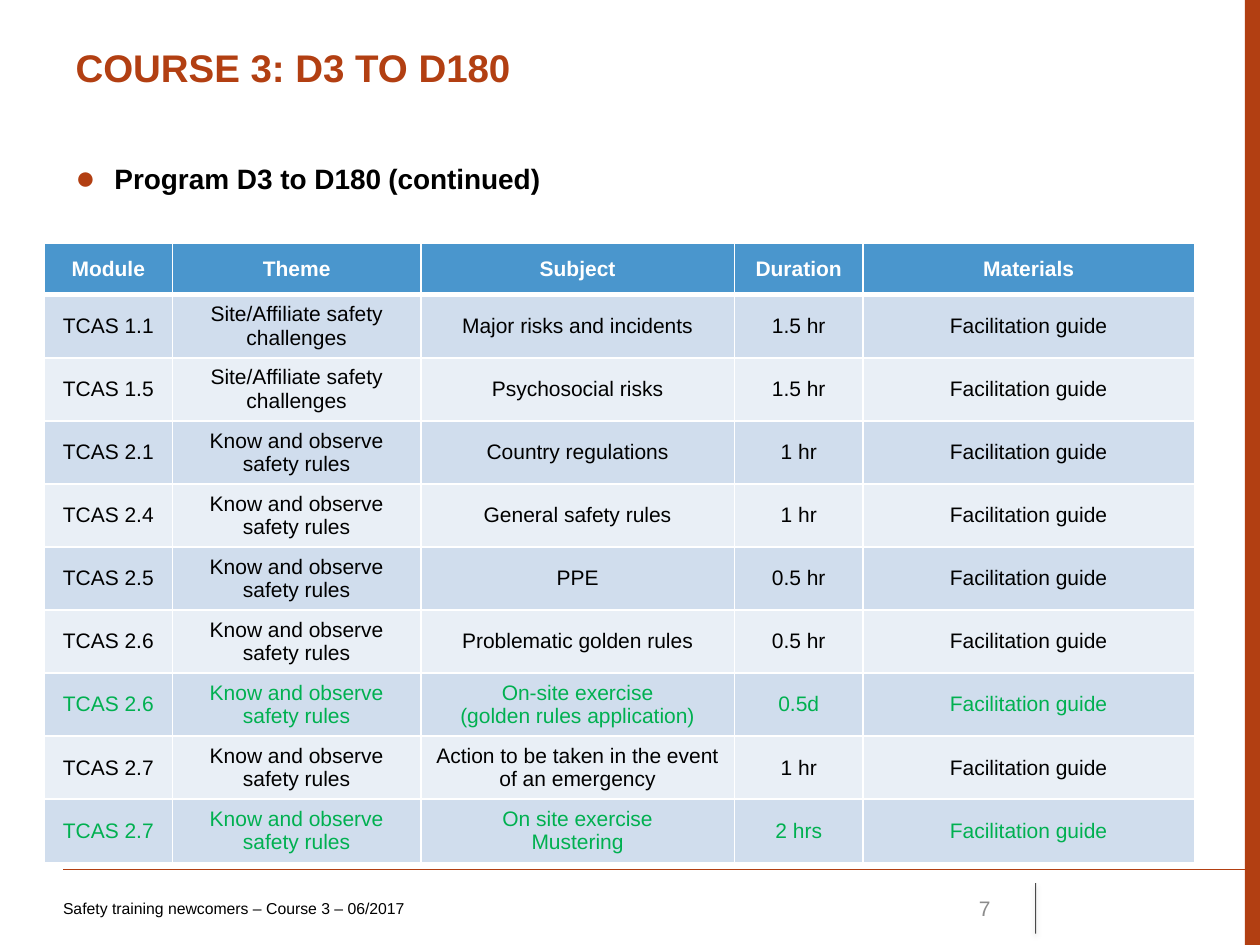
"""Build the Course 3 programme slide."""
from dataclasses import dataclass

from lxml import etree
from pptx import Presentation
from pptx import util as u
from pptx.dml.color import RGBColor
from pptx.enum import shapes, text
from pptx.oxml import parse_xml
from pptx.oxml.ns import nsdecls, qn


@dataclass(frozen=True)
class Theme:
    """Colours, font and type sizes of the slide."""
    font: str = "Arial"
    accent: str = "B23F12"
    ink: str = "000000"
    white: str = "FFFFFF"
    muted: str = "8C8C8C"
    header: str = "4A96CD"
    bands: tuple = ("D0DDED", "E9EFF6")
    exercise: str = "00B050"
    title_size: float = 22
    heading_size: float = 16
    gap_size: float = 14
    table_size: float = 12
    footer_size: float = 9


THEME = Theme()
HEADERS = ("Module", "Theme", "Subject", "Duration", "Materials")
COLUMN_WIDTHS = (1.02, 1.97, 2.49, 1.02, 2.63)
ROW_HEIGHT = 0.41
CHALLENGES = "Site/Affiliate safety challenges"
RULES = "Know and observe safety rules"
MATERIALS = "Facilitation guide"
MODULES = (
    ("TCAS 1.1", CHALLENGES, "Major risks and incidents", "1.5 hr"),
    ("TCAS 1.5", CHALLENGES, "Psychosocial risks", "1.5 hr"),
    ("TCAS 2.1", RULES, "Country regulations", "1 hr"),
    ("TCAS 2.4", RULES, "General safety rules", "1 hr"),
    ("TCAS 2.5", RULES, "PPE", "0.5 hr"),
    ("TCAS 2.6", RULES, "Problematic golden rules", "0.5 hr"),
    ("TCAS 2.6", RULES, "On-site exercise\n(golden rules application)", "0.5d"),
    ("TCAS 2.7", RULES, "Action to be taken in the event of an emergency", "1 hr"),
    ("TCAS 2.7", RULES, "On site exercise\nMustering", "2 hrs"),
)
EXERCISE_ROWS = (7, 9)


def format_font(font, size, color, bold=False):
    """Apply the theme font with a size, colour and weight."""
    font.name = THEME.font
    font.size = u.Pt(size)
    font.bold = bold
    font.color.rgb = RGBColor.from_string(color)


def format_frame(frame, size, color, bold=False, align=text.PP_ALIGN.LEFT):
    """Format every run of a text frame alike."""
    for paragraph in frame.paragraphs:
        paragraph.alignment = align
        for run in paragraph.runs:
            format_font(run.font, size, color, bold)


def add_text(slide, box, anchor):
    """Add a wrapping text box and return its text frame."""
    frame = slide.shapes.add_textbox(*map(u.Inches, box)).text_frame
    frame.word_wrap = True
    frame.vertical_anchor = anchor
    return frame


def add_line(slide, start, end, color, width):
    """Add a straight line without a shadow."""
    line = slide.shapes.add_connector(
        shapes.MSO_CONNECTOR.STRAIGHT, *map(u.Inches, start + end))
    line.line.color.rgb = RGBColor.from_string(color)
    line.line.width = u.Pt(width)
    etree.SubElement(line._element.spPr, qn("a:effectLst"))
    return line


def add_side_bar(slide):
    """Add the coloured bar along the right edge."""
    bar = slide.shapes.add_shape(
        shapes.MSO_SHAPE.RECTANGLE, *map(u.Inches, (9.88, 0, 0.12, 7.5)))
    bar.shadow.inherit = False
    bar.fill.solid()
    bar.fill.fore_color.rgb = RGBColor.from_string(THEME.accent)
    bar.line.fill.background()


def add_divider(slide):
    """Add the translucent, softly shadowed footer divider."""
    properties = add_line(slide, (8.22, 7.01), (8.22, 7.41), THEME.ink, 0.5)._element.spPr
    color = properties.find(".//" + qn("a:srgbClr"))
    etree.SubElement(color, qn("a:alpha"), val="70000")
    properties.find(qn("a:effectLst")).append(parse_xml(
        f'<a:outerShdw {nsdecls("a")} blurRad="{u.Pt(3.1)}" dist="{u.Pt(1.6)}" dir="5400000">'
        f'<a:srgbClr val="{THEME.ink}"><a:alpha val="38000"/></a:srgbClr></a:outerShdw>'))


def set_title(slide, title):
    """Fill, place and format the title placeholder."""
    shape = slide.shapes.title
    shape.left, shape.top, shape.width, shape.height = map(
        u.Inches, (0.5, 0.3, 8.99, 0.69))
    frame = shape.text_frame
    frame.text = title
    frame.auto_size = text.MSO_AUTO_SIZE.NONE
    frame.vertical_anchor = text.MSO_ANCHOR.TOP
    format_frame(frame, THEME.title_size, THEME.accent, True)


def add_bullet(paragraph):
    """Give a paragraph a hanging accent bullet."""
    properties = paragraph._p.get_or_add_pPr()
    properties.set("marL", str(u.Inches(0.31)))
    properties.set("indent", str(u.Inches(-0.31)))
    color = etree.SubElement(properties, qn("a:buClr"))
    etree.SubElement(color, qn("a:srgbClr"), val=THEME.accent)
    etree.SubElement(properties, qn("a:buSzPct"), val="120000")
    etree.SubElement(properties, qn("a:buFont"), typeface=THEME.font)
    etree.SubElement(properties, qn("a:buChar"), char="●")


def add_heading(slide):
    """Add the bulleted heading above the table."""
    frame = add_text(slide, (0.5, 1.23, 8.99, 0.47), text.MSO_ANCHOR.TOP)
    paragraph = frame.paragraphs[0]
    add_bullet(paragraph)
    paragraph.space_after = u.Pt(3)
    for words, size in (("Program D3 to D180", THEME.heading_size),
                        (" ", THEME.gap_size),
                        ("(continued)", THEME.heading_size)):
        run = paragraph.add_run()
        run.text = words
        format_font(run.font, size, THEME.ink, True)


def set_borders(cell, top, bottom):
    """Draw white borders around a cell, with widths in points."""
    properties = cell._tc.get_or_add_tcPr()
    for side, width in (("L", 1), ("R", 1), ("T", top), ("B", bottom)):
        properties.append(parse_xml(
            f'<a:ln{side} {nsdecls("a")} w="{u.Pt(width)}"><a:solidFill>'
            f'<a:srgbClr val="{THEME.white}"/></a:solidFill></a:ln{side}>'))


def fill_cell(cell, words, row):
    """Write a cell and style it by its row."""
    is_header = row == 0
    set_borders(cell, 3 if row == 1 else 1, 3 if is_header else 1)
    fill = THEME.header if is_header else THEME.bands[(row - 1) % 2]
    ink = THEME.exercise if row in EXERCISE_ROWS else THEME.ink
    cell.fill.solid()
    cell.fill.fore_color.rgb = RGBColor.from_string(fill)
    cell.vertical_anchor = text.MSO_ANCHOR.MIDDLE
    cell.text_frame.text = words
    format_frame(cell.text_frame, THEME.table_size,
                 THEME.white if is_header else ink, is_header, text.PP_ALIGN.CENTER)


def add_programme(slide):
    """Add the table of training modules."""
    rows = [HEADERS] + [module + (MATERIALS,) for module in MODULES]
    box = (0.35, 1.93, sum(COLUMN_WIDTHS), ROW_HEIGHT * len(rows))
    table = slide.shapes.add_table(
        len(rows), len(HEADERS), *map(u.Inches, box)).table
    for column, width in zip(table.columns, COLUMN_WIDTHS):
        column.width = u.Inches(width)
    for row, values in enumerate(rows):
        table.rows[row].height = u.Inches(ROW_HEIGHT)
        for column, words in enumerate(values):
            fill_cell(table.cell(row, column), words, row)


def add_footer(slide):
    """Add the footer text and the page number."""
    number = add_text(slide, (7.17, 7.01, 0.79, 0.4), text.MSO_ANCHOR.MIDDLE)
    number.text = "7"
    format_frame(number, THEME.table_size, THEME.muted, align=text.PP_ALIGN.RIGHT)
    footer = add_text(slide, (0.5, 7.01, 6.08, 0.4), text.MSO_ANCHOR.MIDDLE)
    footer.margin_left = 0
    footer.text = "Safety training newcomers – Course 3 – 06/2017"
    format_frame(footer, THEME.footer_size, THEME.ink)


def main():
    """Build and save the presentation."""
    presentation = Presentation()
    presentation.slide_width, presentation.slide_height = u.Inches(10), u.Inches(7.5)
    slide = presentation.slides.add_slide(presentation.slide_layouts[5])
    add_side_bar(slide)
    add_line(slide, (0.5, 6.9), (10, 6.9), THEME.accent, 0.75)
    add_divider(slide)
    set_title(slide, "COURSE 3: D3 TO D180")
    add_heading(slide)
    add_programme(slide)
    add_footer(slide)
    presentation.save("out.pptx")


if __name__ == "__main__":
    main()
